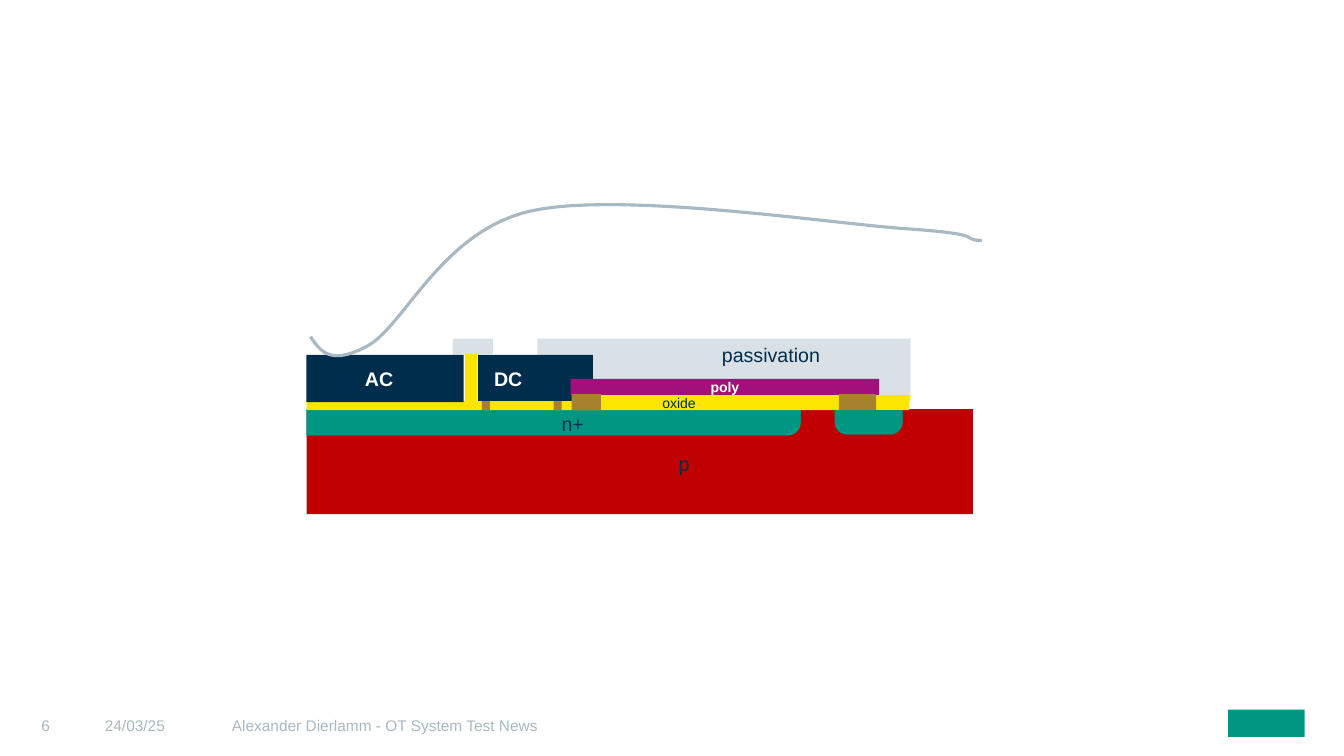
import dataclasses
import typing

import pptx
import pptx.dml.color
import pptx.enum.shapes
import pptx.enum.text
import pptx.util

WIDE, HIGH = pptx.util.Inches(13.33), pptx.util.Inches(7.5)
COLS, ROWS = 133.3, 75
FONT = "Arial"
NAVY, WHITE, GREY, MIST = "002D4C", "FFFFFF", "A8B9C4", "DAE1E6"
RED, GREEN, GOLD, BROWN, PLUM = "C00000", "009682", "FCE500", "A7822E", "A3107C"
KIND = pptx.enum.shapes.MSO_SHAPE
ALIGN = pptx.enum.text.PP_ALIGN
MIDDLE = pptx.enum.text.MSO_ANCHOR.MIDDLE
TOP = pptx.enum.text.MSO_ANCHOR.TOP
STEPS = 24
BODY = 3.04 * 10
BASE = 40.6

Point = tuple[float, float]


@dataclasses.dataclass
class Text:
    words: str
    size: float
    tint: str
    bold: bool = False
    align: typing.Any = ALIGN.LEFT
    inset: float = 0
    drop: float = 0
    anchor: typing.Any = MIDDLE
    wrap: bool = True
    space: dict = dataclasses.field(default_factory=dict)


@dataclasses.dataclass
class Box:
    left: float
    top: float
    width: float
    height: float
    fill: str = ""
    text: typing.Optional[Text] = None
    kind: typing.Any = KIND.RECTANGLE


def col(count: float) -> int:
    return round(WIDE * count / COLS)


def row(count: float) -> int:
    return round(HIGH * count / ROWS)


def tint(code: str) -> pptx.dml.color.RGBColor:
    return pptx.dml.color.RGBColor.from_string(code)


def apply(item: typing.Any, look: dict) -> None:
    for name, value in look.items():
        setattr(item, name, value)


def write(shape: typing.Any, text: Text) -> None:
    frame = shape.text_frame
    apply(frame, {
        "word_wrap": text.wrap, "vertical_anchor": text.anchor,
        "margin_left": col(text.inset), "margin_right": 0,
        "margin_top": row(text.drop), "margin_bottom": 0,
    })
    para = frame.paragraphs[0]
    apply(para, {"alignment": text.align, **text.space})
    run = para.add_run()
    run.text = text.words
    apply(run.font, {"name": FONT, "size": pptx.util.Pt(text.size), "bold": text.bold})
    run.font.color.rgb = tint(text.tint)


def draw(slide: typing.Any, box: Box) -> None:
    place = col(box.left), row(box.top), col(box.width), row(box.height)
    if box.fill:
        shape = slide.shapes.add_shape(box.kind, *place)
        shape.shadow.inherit = False
        shape.fill.solid()
        shape.fill.fore_color.rgb = tint(box.fill)
        shape.line.fill.background()
        if box.kind != KIND.RECTANGLE:
            shape.rotation = 180
            shape.adjustments[0], shape.adjustments[1] = 0.5, 0
            shape.line.color.rgb = tint(box.fill)
            shape.line.width = pptx.util.Pt(0.25)
    else:
        shape = slide.shapes.add_textbox(*place)
    if box.text:
        write(shape, box.text)


def bend(start: Point, one: Point, two: Point, end: Point) -> list[Point]:
    points = []
    for step in range(1, STEPS + 1):
        t = step / STEPS
        u = 1 - t
        parts = (u ** 3, 3 * u * u * t, 3 * u * t * t, t ** 3)
        x, y = (sum(p * k[axis] for p, k in zip(parts, (start, one, two, end)))
                for axis in (0, 1))
        points.append((col(x), row(y)))
    return points


def trace(slide: typing.Any, knots: list[Point]) -> None:
    points = [p for i in range(0, len(knots) - 1, 3) for p in bend(*knots[i:i + 4])]
    pen = slide.shapes.build_freeform(col(knots[0][0]), row(knots[0][1]), scale=1.0)
    pen.add_line_segments(points, close=False)
    curve = pen.convert_to_shape()
    curve.shadow.inherit = False
    curve.fill.background()
    curve.line.color.rgb = tint(GREY)
    curve.line.width = pptx.util.Pt(2.25)


def label(words: str, left: float, top: float, size: float = 14) -> Box:
    space = {"line_spacing": 1.1, "space_before": pptx.util.Pt(3), "space_after": pptx.util.Pt(3)}
    return Box(left, top, 10, 3.7, text=Text(words, size, NAVY, anchor=TOP, wrap=False, space=space))


def foot(words: str, left: float, width: float) -> Box:
    return Box(left, 68.6, width, 6.4, text=Text(words, 11, GREY, drop=0.4))


PARTS = [
    foot("6", 4.1, 6.3),
    foot("24/03/25", 10.4, 12.6),
    foot("Alexander Dierlamm - OT System Test News", 23, 63.8),
    Box(121.8, 70.4, 7.6, 2.7, GREEN),
    Box(53.3, 33.6, 37, 5.6, MIST),
    Box(47.4, 35.2, 11.4, 4.7, NAVY, Text("DC", 14, WHITE, True, inset=1.6)),
    Box(BODY, BASE, 66.1, 10.4, RED),
    Box(BODY, BASE, 49, 2.6, GREEN, kind=KIND.SNIP_ROUND_RECTANGLE),
    Box(BODY, 39.8, 59.8, 0.9, GOLD),
    Box(56.6, 37.6, 30.6, 1.6, PLUM, Text("poly", 10, WHITE, True, ALIGN.CENTER)),
    Box(82.8, 40.7, 6.7, 2.4, GREEN, kind=KIND.ROUND_2_SAME_RECTANGLE),
    Box(57.2, 39.2, 33.1, 0.6, GOLD),
    *(Box(left, 39.1, width, 1.6, BROWN) for left, width in ((83.2, 3.7), (56.7, 2.9))),
    *(Box(left, 39.8, 0.8, 0.9, BROWN) for left in (47.8, 54.9)),
    Box(44.9, 33.6, 4, 1.6, MIST),
    label("oxide", 65.7, 39, 10),
    label("n+", 55.7, 40.6),
    label("p", 67.3, 44.6),
    label("passivation", 71.6, 33.8),
    Box(BODY, 35.2, 15.6, 4.7, NAVY, Text("AC", 14, WHITE, True, inset=5.8)),
    Box(46.1, 35.1, 1.2, 4.7, GOLD),
]

KNOTS = [
    (30.8, 33.4), (31.8, 34.9), (32.8, 36.3), (36.5, 34.3),
    (40.2, 32.2), (43.9, 22.8), (52.8, 20.9),
    (61.7, 19), (82.6, 22.2), (89.9, 22.7),
    (97.2, 23.2), (95.6, 23.6), (96.7, 23.8),
    (97.8, 23.9), (97, 23.9), (96.7, 23.8),
]


def main() -> None:
    deck = pptx.Presentation()
    apply(deck, {"slide_width": WIDE, "slide_height": HIGH})
    slide = deck.slides.add_slide(deck.slide_layouts[6])
    for part in PARTS:
        draw(slide, part)
    trace(slide, KNOTS)
    deck.save("out.pptx")


if __name__ == "__main__":
    main()
